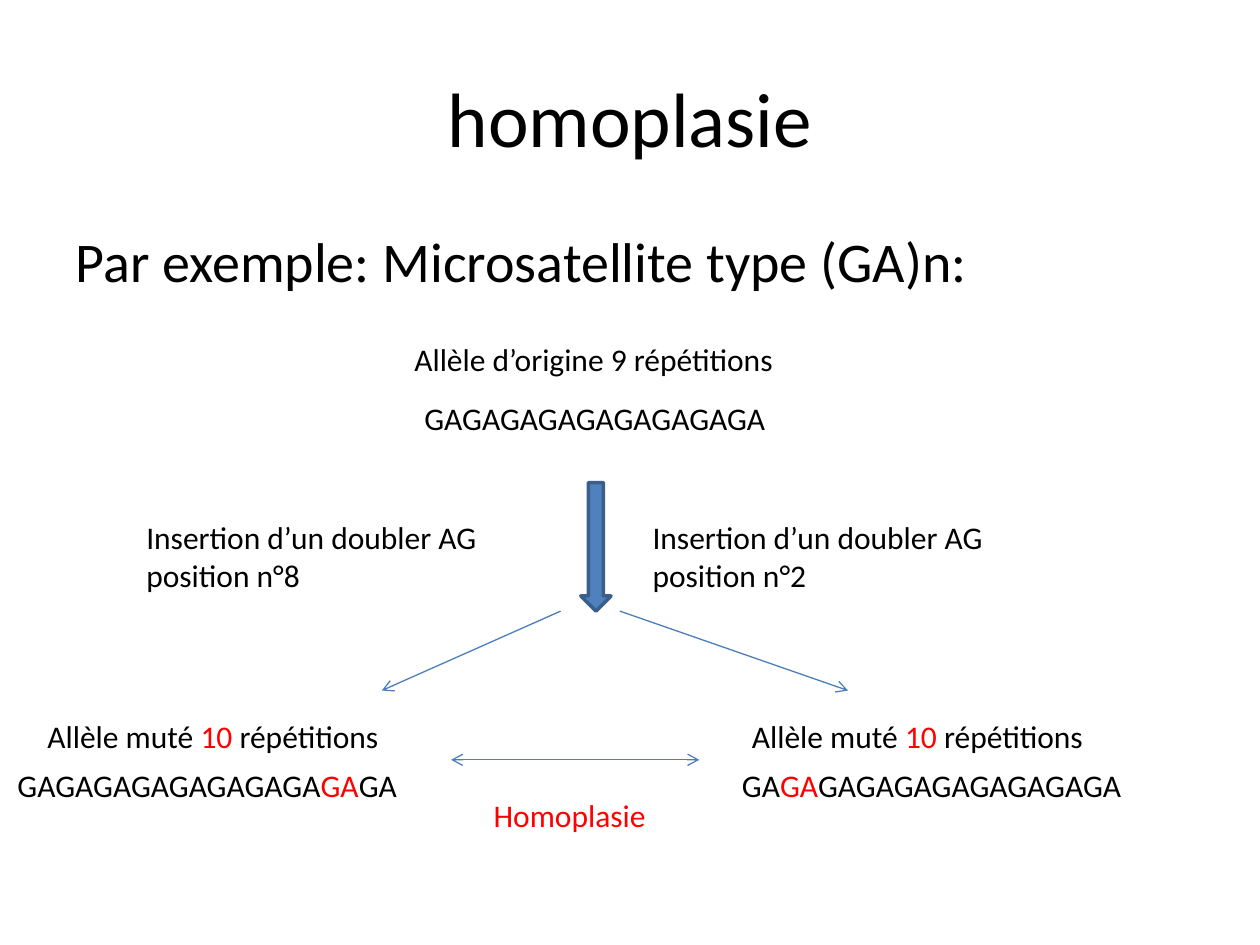
from lxml.etree import SubElement
from pptx import Presentation
from pptx.dml.color import RGBColor
from pptx.enum.shapes import MSO_CONNECTOR, MSO_SHAPE
from pptx.enum.text import MSO_ANCHOR, PP_ALIGN
from pptx.oxml.ns import qn
from pptx.util import Pt

BLACK = RGBColor(0x00, 0x00, 0x00)
RED = RGBColor(0xFF, 0x00, 0x00)
BLUE = RGBColor(0x4F, 0x81, 0xBD)
DARK_BLUE = RGBColor(0x3A, 0x5F, 0x8C)
LINE_BLUE = RGBColor(0x4B, 0x7E, 0xBC)

# Content: lengths in points; each label is (left, top, width, height), runs
TITLE = "homoplasie"
EXAMPLE = "Par exemple: Microsatellite type (GA)n:"
MUTATED = [("Allèle muté ", BLACK), ("10", RED), (" répétitions", BLACK)]
LABELS = [
    ((235.4, 224.6, 215.3, 29), [("GAGAGAGAGAGAGAGAGA", BLACK)]),
    ((229.7, 190.8, 226.8, 29), [("Allèle d’origine 9 répétitions", BLACK)]),
    ((365.8, 292.5, 226.8, 51), [("Insertion d’un doubler AG position n°2", BLACK)]),
    ((76.5, 292.5, 226.8, 51), [("Insertion d’un doubler AG position n°8", BLACK)]),
    ((20, 406, 226.8, 29), MUTATED),
    ((2.9, 434.2, 238.3, 29),
     [("GAGAGAGAGAGAGAGA", BLACK), ("GA", RED), ("GA", BLACK)]),
    ((416.9, 434.2, 232.6, 29),
     [("GA", BLACK), ("GA", RED), ("GAGAGAGAGAGAGAGA", BLACK)]),
    ((422.6, 406, 226.8, 29), MUTATED),
    ((275, 451.3, 102.2, 29), [("Homoplasie", RED)]),
]
MUTATION_ARROW = (331.9, 275.8, 17.3, 73.4)
# Start, end, ends that carry an arrowhead
LINKS = [
    ((354.2, 349.2), (484.6, 394.6), ["tailEnd"]),
    ((320.4, 349.2), (218.2, 394.6), ["tailEnd"]),
    ((257.8, 434.2), (399.6, 434.2), ["headEnd", "tailEnd"]),
]


def points(values):
    return [Pt(value) for value in values]


def write(frame, runs, size=18, align=PP_ALIGN.LEFT, anchor=MSO_ANCHOR.TOP):
    frame.word_wrap = True
    frame.vertical_anchor = anchor
    paragraph = frame.paragraphs[0]
    paragraph.alignment = align
    paragraph.space_before = Pt(0)
    for text, color in runs:
        run = paragraph.add_run()
        run.text = text
        run.font.name = "Calibri"
        run.font.size = Pt(size)
        run.font.color.rgb = color
    return paragraph


def place(placeholder, box):
    placeholder.left, placeholder.top, placeholder.width, placeholder.height = points(box)


def add_link(shapes, start, end, heads):
    link = shapes.add_connector(MSO_CONNECTOR.STRAIGHT, *points(start + end))
    link.line.color.rgb = LINE_BLUE
    link.line.width = Pt(0.75)
    outline = link.line._get_or_add_ln()
    for head in heads:
        SubElement(outline, qn(f"a:{head}"), type="arrow")
    SubElement(link._element.spPr, qn("a:effectLst"))


def main():
    deck = Presentation()
    deck.slide_width, deck.slide_height = Pt(720), Pt(540)
    slide = deck.slides.add_slide(deck.slide_layouts[1])
    shapes = slide.shapes

    # Title and example
    place(shapes.title, (36, 21.6, 648, 90))
    write(shapes.title.text_frame, [(TITLE, BLACK)], size=44,
          align=PP_ALIGN.CENTER, anchor=MSO_ANCHOR.MIDDLE)
    body = slide.placeholders[1]
    place(body, (36, 126, 648, 376.4))
    example = write(body.text_frame, [(EXAMPLE, BLACK)], size=32)
    properties = example._p.get_or_add_pPr()
    properties.set("marL", "0")
    properties.set("indent", "0")
    SubElement(properties, qn("a:buNone"))

    # Alleles and mutations
    for box, runs in LABELS:
        write(shapes.add_textbox(*points(box)).text_frame, runs)

    # Arrows
    mutation = shapes.add_shape(MSO_SHAPE.DOWN_ARROW, *points(MUTATION_ARROW))
    mutation.shadow.inherit = False
    mutation.fill.solid()
    mutation.fill.fore_color.rgb = BLUE
    mutation.line.color.rgb = DARK_BLUE
    mutation.line.width = Pt(2)
    for start, end, heads in LINKS:
        add_link(shapes, start, end, heads)

    deck.save("out.pptx")


if __name__ == "__main__":
    main()
